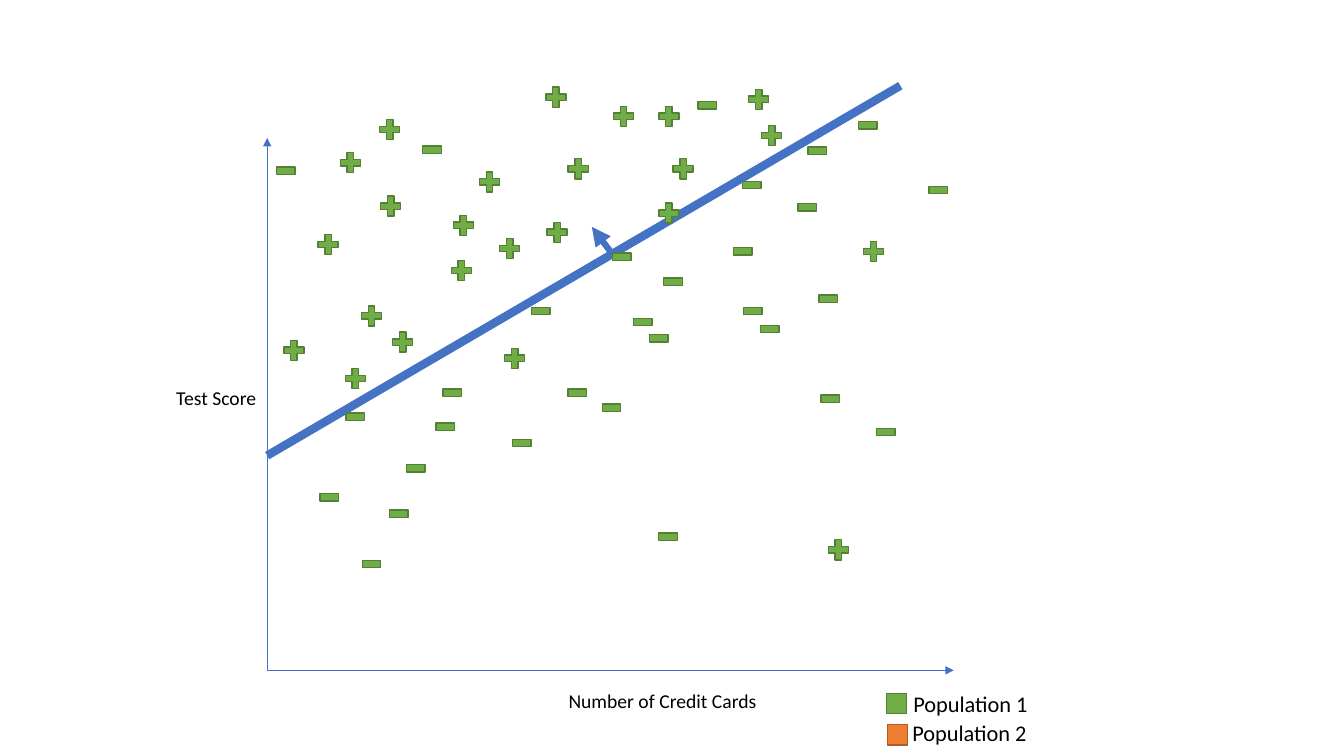
from lxml import etree
from pptx import Presentation
from pptx.dml.color import RGBColor
from pptx.enum import shapes, text
from pptx.oxml.ns import qn
from pptx.util import Inches, Pt

BLUE, GREEN, ORANGE = "4472C4", "70AD47", "ED7D31"
DARK_GREEN, DARK_ORANGE, BLACK = "538035", "AF5C24", "000000"

# Left and top of each marker, in inches
PLUSES = [
    (3.55, 3), (4.72, 1.67), (4.97, 3.42), (6.64, 1.54), (7.39, 0.85),
    (3.39, 3.62), (5.38, 0.83), (6.5, 1.98), (8.18, 5.32), (3.34, 1.48),
    (5.6, 1.54), (4.44, 2.55), (3.12, 2.29), (6.5, 1.02), (4.92, 2.33),
    (3.86, 3.26), (7.52, 1.21), (3.73, 1.15), (8.53, 2.36), (3.74, 1.91),
    (6.05, 1.02), (5.39, 2.17), (2.78, 3.34), (4.46, 2.1),
]
MINUSES = [
    (3.4, 3.98), (7.88, 1.9), (7.33, 1.68), (4.16, 1.33), (6.89, 0.89),
    (2.71, 1.54), (5.6, 3.74), (6.25, 3.04), (7.24, 2.34), (5.24, 2.93),
    (7.98, 1.34), (4, 4.49), (7.34, 2.93), (6.5, 5.17), (7.51, 3.11),
    (3.56, 5.44), (8.66, 4.13), (6.04, 2.39), (5.05, 4.24), (6.55, 2.64),
    (4.29, 4.08), (3.14, 4.78), (8.48, 1.09), (8.11, 3.8), (5.94, 3.89),
    (6.41, 3.2), (3.83, 4.94), (8.09, 2.81), (9.18, 1.73), (4.36, 3.74),
]


def rgb(color):
    return RGBColor.from_string(color)


def add_line(parent, start, end, width, arrow=False):
    line = parent.add_connector(
        shapes.MSO_CONNECTOR.STRAIGHT, *map(Inches, start + end))
    line.line.color.rgb = rgb(BLUE)
    line.line.width = Pt(width)
    sp_pr = line._element.spPr
    if arrow:
        etree.SubElement(sp_pr.find(qn("a:ln")), qn("a:tailEnd"), type="triangle")
    etree.SubElement(sp_pr, qn("a:effectLst"))


def add_marker(slide, kind, left, top, width, height, fill=GREEN, outline=DARK_GREEN):
    sp = slide.shapes.add_shape(kind, *map(Inches, (left, top, width, height)))
    sp.shadow.inherit = False
    sp.fill.solid()
    sp.fill.fore_color.rgb = rgb(fill)
    sp.line.color.rgb = rgb(outline)
    sp.line.width = Pt(1)


def add_label(slide, words, left, top, width, height, size):
    tf = slide.shapes.add_textbox(*map(Inches, (left, top, width, height))).text_frame
    tf.word_wrap = False
    tf.auto_size = text.MSO_AUTO_SIZE.SHAPE_TO_FIT_TEXT
    p = tf.paragraphs[0]
    p.text = words
    p.font.name = "Calibri"
    p.font.size = Pt(size)
    p.font.color.rgb = rgb(BLACK)


def add_axes(slide):
    origin = (2.65, 6.65)
    for end in ((2.65, 1.37), (9.46, 6.65)):
        add_line(slide.shapes, origin, end, 0.5, arrow=True)
    add_label(slide, "Test Score", 1.65, 3.78, 1, 0.34, 14)
    add_label(slide, "Number of Credit Cards", 5.54, 6.79, 2.08, 0.34, 14)


def add_boundary(slide):
    """Add the separating line with its arrow towards the positive side."""
    group = slide.shapes.add_group_shape()
    add_line(group.shapes, (2.65, 4.52), (8.93, 0.85), 6)
    add_line(group.shapes, (6.05, 2.49), (5.87, 2.25), 4.5, arrow=True)


def add_legend(slide):
    entries = [("Population 1", GREEN, DARK_GREEN), ("Population 2", ORANGE, DARK_ORANGE)]
    for row, (name, fill, outline) in enumerate(entries):
        add_marker(slide, shapes.MSO_SHAPE.RECTANGLE,
                   8.79 + 0.01 * row, 6.88 + 0.31 * row, 0.2, 0.2, fill, outline)
        add_label(slide, name, 8.96 - 0.01 * row, 6.8 + 0.29 * row, 1.35, 0.37, 16)


def main():
    prs = Presentation()
    prs.slide_width, prs.slide_height = Inches(13.33), Inches(7.5)
    slide = prs.slides.add_slide(prs.slide_layouts[6])
    add_axes(slide)
    add_boundary(slide)
    for left, top in PLUSES:
        add_marker(slide, shapes.MSO_SHAPE.MATH_PLUS, left, top, 0.27, 0.27)
    for left, top in MINUSES:
        add_marker(slide, shapes.MSO_SHAPE.MATH_MINUS, left, top, 0.25, 0.31)
    add_legend(slide)
    prs.save("out.pptx")


if __name__ == "__main__":
    main()
